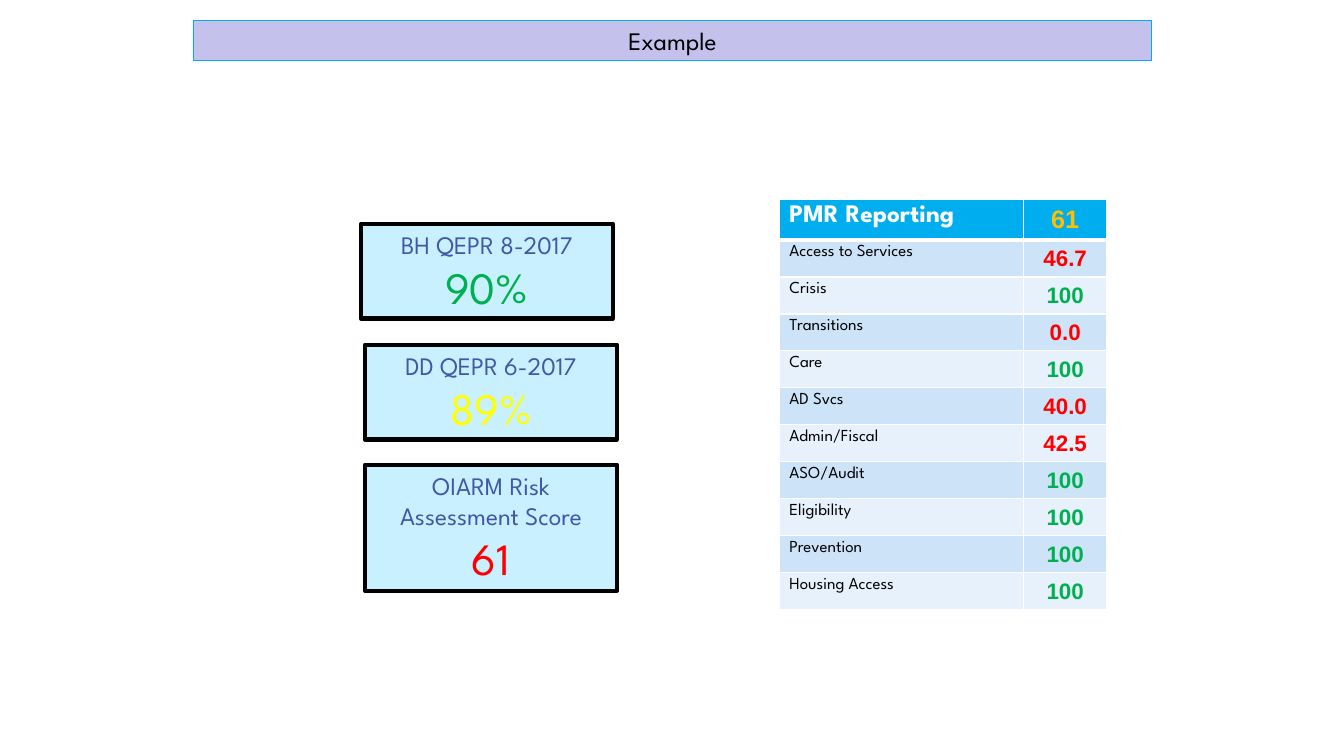
from dataclasses import dataclass

from pptx import Presentation
from pptx.dml.color import RGBColor
from pptx.enum.shapes import MSO_SHAPE
from pptx.enum.text import MSO_ANCHOR, MSO_AUTO_SIZE, PP_ALIGN
from pptx.oxml import parse_xml
from pptx.oxml.ns import nsdecls, qn
from pptx.util import Inches, Pt


@dataclass(frozen=True)
class Theme:
    heading_font: str = "League Spartan"
    number_font: str = "Arial"
    black: str = "000000"
    white: str = "FFFFFF"
    blue: str = "00ADEE"
    lavender: str = "C4C1EC"
    pale_blue: str = "C9F0FF"
    indigo: str = "4258A7"
    green: str = "00B050"
    yellow: str = "FFFF00"
    amber: str = "FFC000"
    red: str = "FF0000"
    bands: tuple = ("CCE3F8", "E7F1FC")
    heading_size: int = 18
    score_size: int = 32
    label_size: int = 12
    value_size: int = 16


THEME = Theme()

TABLE_HEIGHT = 4.07
HEADER_HEIGHT = 0.4

SCORE_CARDS = [
    (3.58, 2.22, 0.94, "BH QEPR 8-2017", "90%", THEME.green),
    (3.62, 3.42, 0.94, "DD QEPR 6-2017", "89%", THEME.yellow),
    (3.62, 4.61, 1.25, "OIARM Risk Assessment Score", "61", THEME.red),
]

MEASURES = [
    ("Access to Services", "46.7"),
    ("Crisis", "100"),
    ("Transitions", "0.0"),
    ("Care", "100"),
    ("AD Svcs", "40.0"),
    ("Admin/Fiscal", "42.5"),
    ("ASO/Audit", "100"),
    ("Eligibility", "100"),
    ("Prevention", "100"),
    ("Housing Access", "100"),
]


def color(value):
    return RGBColor.from_string(value)


def add_run(paragraph, text, size, text_color, font=THEME.heading_font, bold=False):
    run = paragraph.add_run()
    run.text = text
    run.font.name = font
    run.font.size = Pt(size)
    run.font.bold = bold
    run.font.color.rgb = color(text_color)


def add_box(slide, left, top, width, height, fill, line, line_width, lines):
    shape = slide.shapes.add_shape(
        MSO_SHAPE.RECTANGLE, Inches(left), Inches(top), Inches(width), Inches(height)
    )
    shape._element.remove(shape._element.find(qn("p:style")))
    shape.shadow.inherit = False
    shape.fill.solid()
    shape.fill.fore_color.rgb = color(fill)
    shape.line.color.rgb = color(line)
    shape.line.width = Pt(line_width)
    frame = shape.text_frame
    frame.word_wrap = True
    frame.auto_size = MSO_AUTO_SIZE.SHAPE_TO_FIT_TEXT
    frame.vertical_anchor = MSO_ANCHOR.MIDDLE
    for index, (text, size, text_color) in enumerate(lines):
        paragraph = frame.add_paragraph() if index else frame.paragraphs[0]
        paragraph.alignment = PP_ALIGN.CENTER
        add_run(paragraph, text, size, text_color)


def set_borders(cell, bottom_width):
    properties = cell._tc.get_or_add_tcPr()
    widths = {"lnL": 1, "lnR": 1, "lnT": 1, "lnB": bottom_width}
    for position, (side, width) in enumerate(widths.items()):
        border = parse_xml(
            f'<a:{side} {nsdecls("a")} w="{Pt(width)}"><a:solidFill>'
            f'<a:srgbClr val="{THEME.white}"/></a:solidFill></a:{side}>'
        )
        properties.insert(position, border)


def fill_cell(cell, text, size, text_color, fill, font, bold, bottom_width):
    cell.fill.solid()
    cell.fill.fore_color.rgb = color(fill)
    cell.margin_top = cell.margin_bottom = Inches(0.05)
    paragraph = cell.text_frame.paragraphs[0]
    if font == THEME.number_font:
        cell.vertical_anchor = MSO_ANCHOR.MIDDLE
        paragraph.alignment = PP_ALIGN.CENTER
    add_run(paragraph, text, size, text_color, font, bold)
    set_borders(cell, bottom_width)


def add_measure_table(slide):
    table = slide.shapes.add_table(
        len(MEASURES) + 1, 2,
        Inches(7.73), Inches(1.98), Inches(3.25), Inches(TABLE_HEIGHT),
    ).table
    table.columns[0].width = Inches(2.42)
    table.columns[1].width = Inches(0.83)

    table.rows[0].height = Inches(HEADER_HEIGHT)
    for column, (text, text_color, font) in enumerate([
        ("PMR Reporting", THEME.white, THEME.heading_font),
        ("61", THEME.amber, THEME.number_font),
    ]):
        fill_cell(table.cell(0, column), text, THEME.heading_size, text_color,
                  THEME.blue, font, True, 3)

    row_height = Inches((TABLE_HEIGHT - HEADER_HEIGHT) / len(MEASURES))
    for row, (name, value) in enumerate(MEASURES, start=1):
        table.rows[row].height = row_height
        band = THEME.bands[(row - 1) % 2]
        value_color = THEME.green if value == "100" else THEME.red
        fill_cell(table.cell(row, 0), name, THEME.label_size, THEME.black,
                  band, THEME.heading_font, False, 1)
        fill_cell(table.cell(row, 1), value, THEME.value_size, value_color,
                  band, THEME.number_font, True, 1)


def main():
    presentation = Presentation()
    presentation.slide_width = Inches(13.33)
    presentation.slide_height = Inches(7.5)
    slide = presentation.slides.add_slide(presentation.slide_layouts[6])

    add_box(slide, 1.92, 0.2, 9.5, 0.4, THEME.lavender, THEME.blue, 0.75,
            [("Example", THEME.heading_size, THEME.black)])
    for left, top, height, label, score, score_color in SCORE_CARDS:
        add_box(slide, left, top, 2.5, height, THEME.pale_blue, THEME.black, 3,
                [(label, THEME.heading_size, THEME.indigo),
                 (score, THEME.score_size, score_color)])
    add_measure_table(slide)

    presentation.save("out.pptx")


if __name__ == "__main__":
    main()
